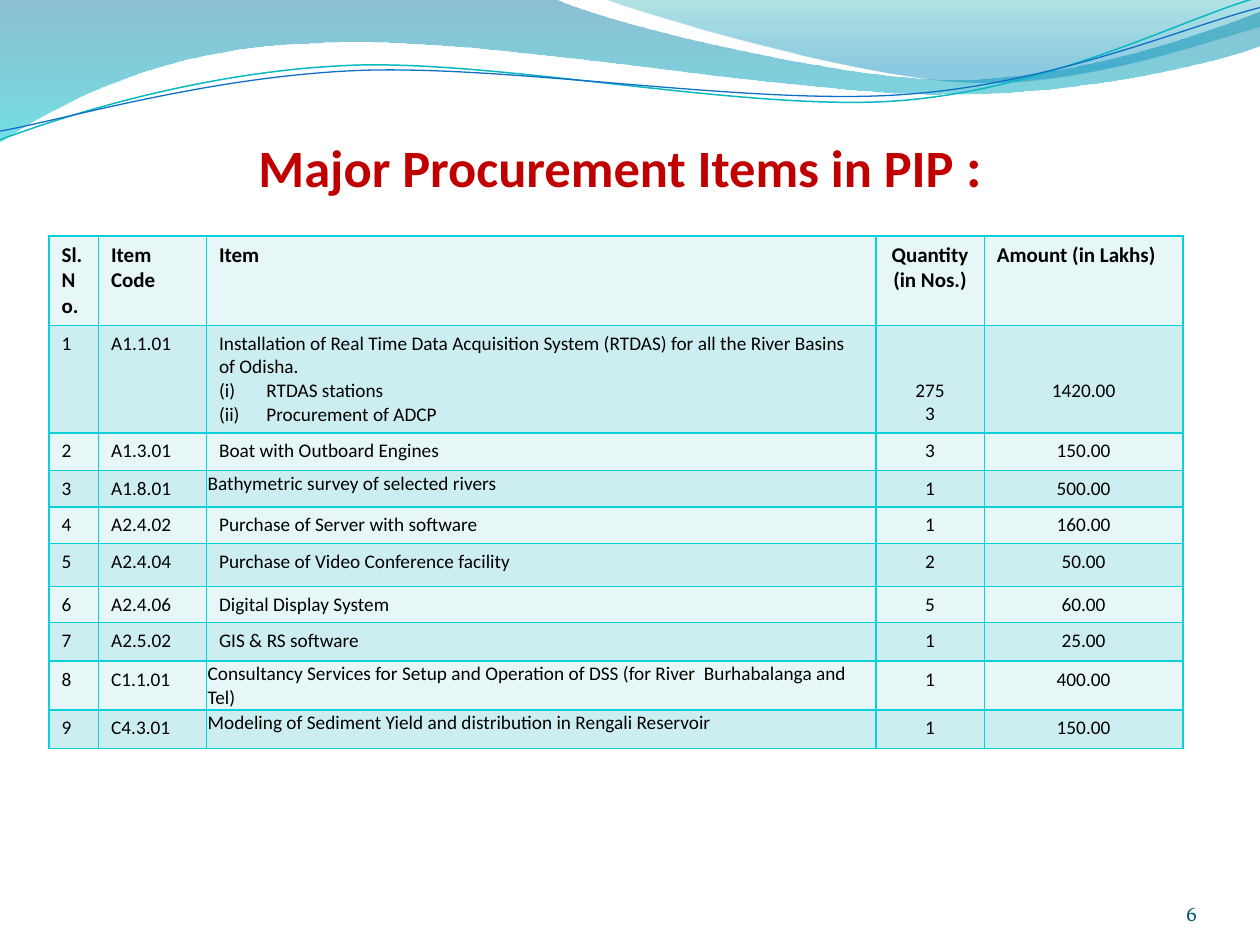
from dataclasses import dataclass

from lxml import etree
from pptx import Presentation
from pptx.dml.color import RGBColor
from pptx.enum.text import MSO_ANCHOR, MSO_AUTO_SIZE, PP_ALIGN
from pptx.oxml.ns import qn
from pptx.util import Pt

LEFT, CENTER, RIGHT = PP_ALIGN.LEFT, PP_ALIGN.CENTER, PP_ALIGN.RIGHT
BOTTOM, NO_FIT = MSO_ANCHOR.BOTTOM, MSO_AUTO_SIZE.NONE
TITLE_ONLY = 5


@dataclass(frozen=True)
class Theme:
    """Colours, fonts and type sizes of the slide."""
    title: str = "C00000"
    text: str = "000000"
    number: str = "045D75"
    border: str = "0BD0D9"
    bands: tuple = ("E7F7F8", "CCEEF1")
    font: str = "Calibri"
    number_font: str = "Vollkorn"
    title_size: int = 30
    colon_size: int = 32
    head_size: int = 12
    body_size: int = 11


T = Theme()

WAVES = [
    ((0, 0),
     [[(316.8, -0.7)],
      [(342.7, 12.2), (478, 45.4), (545.8, 45.4)],
      [(614.2, 45.4), (689.8, 18.7), (720, 6.5)],
      [(720.7, 25.9)],
      [(707.8, 31.7), (626.4, 54.7), (537.1, 54)],
      [(447.8, 54), (275, 20.2), (185, 24.5)],
      [(92.2, 25.9), (33.1, 59.8), (-0.7, 81.4)]],
     [(0, "0074A1", 45), (100, "00C6CF", 55)]),
    ((344.9, -0.7),
     [[(366.5, 7.9), (491, 44.6), (553.7, 46.8)],
      [(616.3, 49.7), (691.9, 23), (720, 15.1)],
      [(720, 0)]],
     [(0, "00A1A9", 30), (80, "008BBF", 45)]),
]
STRANDS = [
    ((0, 79.9),
     [[(34.6, 67), (113.8, 41), (199.4, 37.4)],
      [(284.4, 33.8), (427, 64.1), (513.4, 57.6)],
      [(599.8, 51.1), (675.4, 10.8), (718.6, -1.4)]],
     "0AB8BF", 0.85),
    ((0, 74.9),
     [[(33.8, 69.1), (118.1, 43.9), (203.8, 40.3)],
      [(290.2, 36.7), (429.8, 60.5), (516.2, 54)],
      [(601.9, 48.2), (677.5, 15.1), (720, 4.3)]],
     "0F6FC6", 0.75),
]

COLUMNS = [28.3, 61.7, 382.5, 62, 113.5]
ROW_HEIGHTS = [35, 58.5, 21.5, 20, 20, 24.5, 20, 22, 22, 22]
HEADER = ["Sl.No.", "Item Code", "Item", "Quantity\n(in Nos.)", "Amount (in Lakhs)"]
ITEMS = [
    ("A1.1.01", "Installation of Real Time Data Acquisition System (RTDAS) for all the "
     "River Basins of Odisha.\nRTDAS stations\nProcurement of ADCP", "275\n3", "1420.00"),
    ("A1.3.01", "Boat with Outboard Engines", "3", "150.00"),
    ("A1.8.01", "Bathymetric survey of selected rivers", "1", "500.00"),
    ("A2.4.02", "Purchase of Server with software", "1", "160.00"),
    ("A2.4.04", "Purchase of Video Conference facility", "2", "50.00"),
    ("A2.4.06", "Digital Display System", "5", "60.00"),
    ("A2.5.02", "GIS & RS software", "1", "25.00"),
    ("C1.1.01", "Consultancy Services for Setup and Operation of DSS "
     "(for River  Burhabalanga and Tel)", "1", "400.00"),
    ("C4.3.01", "Modeling of Sediment Yield and distribution in Rengali Reservoir",
     "1", "150.00"),
]
TIGHT_ROWS = (3, 8, 9)
TWO_LINES = 26.9
UNITS = 100


def rgb(value):
    """Turn a hex string into a colour."""
    return RGBColor.from_string(value)


def add_text(p, text, size=T.body_size, color=T.text, font=T.font, bold=False, align=LEFT):
    """Add one formatted run to a paragraph."""
    p.alignment = align
    r = p.add_run()
    r.text = text
    r.font.size, r.font.name, r.font.bold = Pt(size), font, bold
    r.font.color.rgb = rgb(color)


def set_margins(box, left, top, right, bottom):
    """Set the four insets of a cell or text frame."""
    box.margin_left, box.margin_top = Pt(left), Pt(top)
    box.margin_right, box.margin_bottom = Pt(right), Pt(bottom)


def add_path(s, start, segments, close):
    """Add a shadowless freeform whose three-point segments are cubic curves."""
    ends = [start] + [seg[-1] for seg in segments]
    left, top = (min(values) for values in zip(*ends))
    scaled = [(x * UNITS, y * UNITS) for x, y in ends]
    fb = s.shapes.build_freeform(*scaled[0], scale=Pt(1) / UNITS)
    fb.add_line_segments(scaled[1:], close=close)
    sp = fb.convert_to_shape()
    sp.shadow.inherit = False
    for line, seg in zip(list(sp.element.iter(qn("a:lnTo"))), segments):
        if len(seg) == 3:
            curve = etree.Element(qn("a:cubicBezTo"))
            for x, y in seg:
                etree.SubElement(curve, qn("a:pt"), x=str(round((x - left) * UNITS)),
                                 y=str(round((y - top) * UNITS)))
            line.getparent().replace(line, curve)
    return sp


def add_waves(s):
    """Draw the gradient waves and the thin strands at the top."""
    for start, segments, stops in WAVES:
        sp = add_path(s, start, segments, True)
        sp.line.fill.background()
        sp.fill.gradient()
        sp.fill.gradient_angle = 270
        for stop, (pos, color, _) in zip(sp.fill.gradient_stops, stops):
            stop.position = pos / 100
            stop.color.rgb = rgb(color)
        for clr, (_, _, opacity) in zip(sp.element.spPr.iter(qn("a:srgbClr")), stops):
            etree.SubElement(clr, qn("a:alpha"), val=str(opacity * 1000))
    for start, segments, color, width in STRANDS:
        sp = add_path(s, start, segments, False)
        sp.fill.background()
        sp.line.color.rgb = rgb(color)
        sp.line.width = Pt(width)


def add_title(s, left, top, width, height):
    """Place the slide title."""
    sp = s.shapes.title
    sp.left, sp.top, sp.width, sp.height = Pt(left), Pt(top), Pt(width), Pt(height)
    tf = sp.text_frame
    tf.auto_size, tf.vertical_anchor = NO_FIT, BOTTOM
    set_margins(tf, 0, 3.6, 0, 0)
    look = dict(color=T.title, bold=True, align=CENTER)
    add_text(tf.paragraphs[0], "Major Procurement Items in PIP ", size=T.title_size, **look)
    add_text(tf.paragraphs[0], ": ", size=T.colon_size, **look)


def add_number(s, text, left, top, width, height):
    """Place the slide number."""
    tf = s.shapes.add_textbox(Pt(left), Pt(top), Pt(width), Pt(height)).text_frame
    tf.word_wrap, tf.vertical_anchor = True, BOTTOM
    set_margins(tf, 0, 0, 0, 0)
    add_text(tf.paragraphs[0], text, size=T.head_size, color=T.number,
             font=T.number_font, align=RIGHT)


def set_borders(cell):
    """Draw all four borders of a cell."""
    tcPr = cell._tc.get_or_add_tcPr()
    for i, side in enumerate(("lnL", "lnR", "lnT", "lnB")):
        ln = etree.Element(qn(f"a:{side}"), w=str(Pt(1)))
        fill = etree.SubElement(ln, qn("a:solidFill"))
        etree.SubElement(fill, qn("a:srgbClr"), val=T.border)
        tcPr.insert(i, ln)


def number_paragraph(p):
    """Give a paragraph roman numbering with a hanging indent."""
    pPr = p._p.get_or_add_pPr()
    pPr.set("marL", str(Pt(27)))
    pPr.set("indent", str(-Pt(27)))
    etree.SubElement(pPr, qn("a:buFont"), typeface="+mj-lt")
    etree.SubElement(pPr, qn("a:buAutoNum"), type="romanLcParenBoth")


def fill_cell(cell, text, row, col):
    """Write and format one table cell."""
    head = row == 0
    cell.fill.solid()
    cell.fill.fore_color.rgb = rgb(T.bands[row % 2])
    set_borders(cell)
    if col == 2 and row in TIGHT_ROWS:
        set_margins(cell, 0.7, 0.7, 0.7, 0)
    elif row == 1 and col > 2:
        cell.margin_top = Pt(3.6 + TWO_LINES)
    align = CENTER if col == 3 or (col == 4 and not head) else LEFT
    tf = cell.text_frame
    for i, line in enumerate(text.split("\n")):
        p = tf.add_paragraph() if i else tf.paragraphs[0]
        add_text(p, line, size=T.head_size if head else T.body_size, bold=head, align=align)
        if i and col == 2:
            number_paragraph(p)


def add_items(s, left, top):
    """Place the table of procurement items."""
    rows = [HEADER] + [(str(i), *item) for i, item in enumerate(ITEMS, 1)]
    table = s.shapes.add_table(len(rows), len(COLUMNS), Pt(left), Pt(top),
                               Pt(sum(COLUMNS)), Pt(sum(ROW_HEIGHTS))).table
    table.first_row = table.horz_banding = False
    for column, width in zip(table.columns, COLUMNS):
        column.width = Pt(width)
    for i, (row, height) in enumerate(zip(rows, ROW_HEIGHTS)):
        table.rows[i].height = Pt(height)
        for j, text in enumerate(row):
            fill_cell(table.cell(i, j), text, i, j)


def main():
    """Build and save the slide."""
    prs = Presentation()
    prs.slide_width, prs.slide_height = Pt(720), Pt(540)
    s = prs.slides.add_slide(prs.slide_layouts[TITLE_ONLY])
    add_waves(s)
    add_title(s, 34, 73, 648, 40.5)
    add_items(s, 28, 134.8)
    add_number(s, "6", 624, 500.5, 60, 28.5)
    prs.save("out.pptx")


if __name__ == "__main__":
    main()
